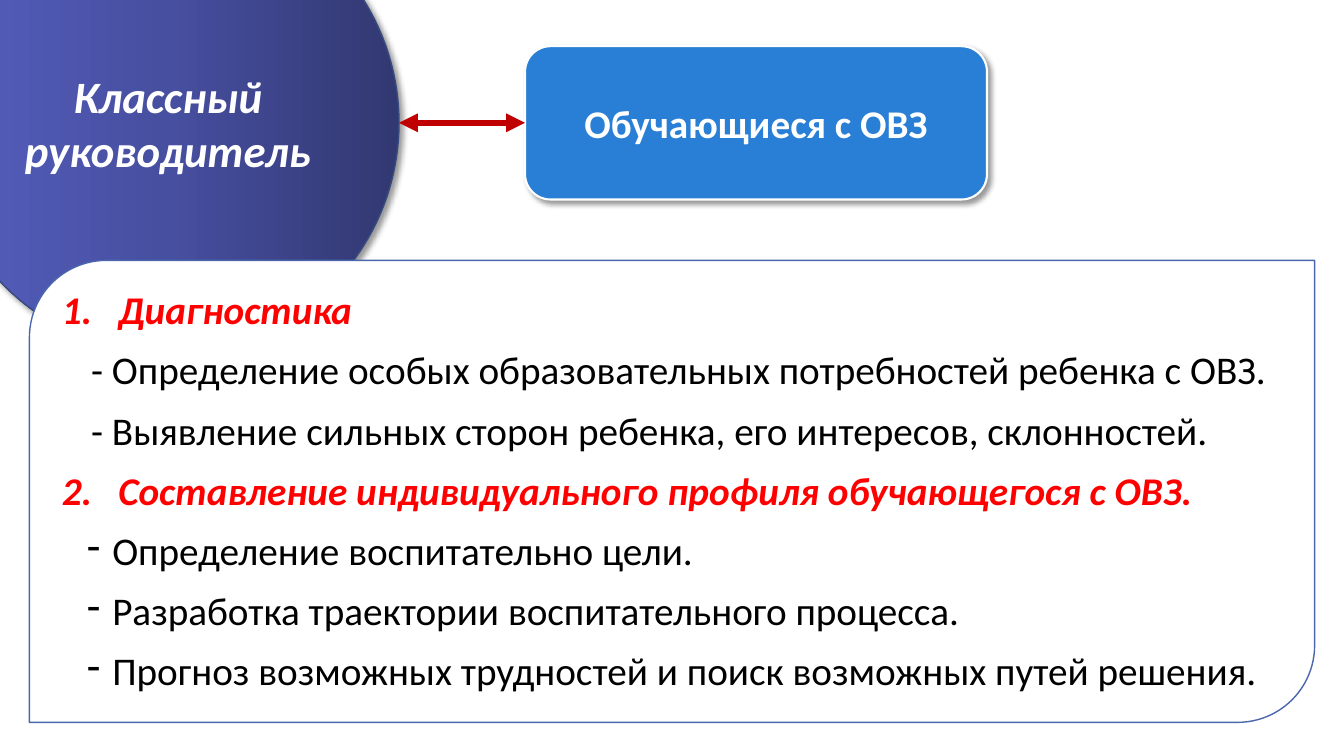
"""Build a slide on how a class teacher works with special-needs students."""
import pptx
import pptx.dml.color
import pptx.enum.shapes
import pptx.enum.text
import pptx.oxml
import pptx.oxml.ns
import pptx.util

COLORS = {
    "white": "FFFFFF", "black": "000000", "red": "FF0000", "arrow": "C00000",
    "blue": "297FD5", "frame": "4A66AC", "rim": "374B7F",
    "dark": "323871", "middle": "474FA0", "light": "555EBE",
}
SHAPES = pptx.enum.shapes.MSO_SHAPE
ANCHORS = pptx.enum.text.MSO_ANCHOR
ALIGNS = pptx.enum.text.PP_ALIGN

HEADING = {"size": pptx.util.Pt(28), "bold": True, "italic": True}
ITEM = {"size": pptx.util.Pt(28), "bold": False, "italic": False}
NUMBER_INDENT = (0.56, -0.56)
PLAIN_INDENT = (0.29, 0)
DASH_INDENT = (0.5, -0.25)
DASH = '<a:buChar {ns} char="-"/>'
NUMBER = '<a:buAutoNum {{ns}} type="arabicPeriod" startAt="{}"/>'

TASKS = [
    ("Диагностика", "red", HEADING, NUMBER_INDENT, NUMBER.format(1)),
    ("- Определение особых образовательных потребностей ребенка с ОВЗ.",
     "black", ITEM, PLAIN_INDENT, None),
    ("- Выявление сильных сторон ребенка, его интересов, склонностей.",
     "black", ITEM, PLAIN_INDENT, None),
    ("Составление индивидуального профиля обучающегося с ОВЗ.",
     "red", HEADING, NUMBER_INDENT, NUMBER.format(2)),
    ("Определение воспитательно цели.", "black", ITEM, DASH_INDENT, DASH),
    ("Разработка траектории воспитательного процесса.",
     "black", ITEM, DASH_INDENT, DASH),
    ("Прогноз возможных трудностей и поиск возможных путей решения.",
     "black", ITEM, DASH_INDENT, DASH),
]


def rgb(name):
    return pptx.dml.color.RGBColor.from_string(COLORS[name])


def xml(text):
    return pptx.oxml.parse_xml(text.format(ns=pptx.oxml.ns.nsdecls("a")))


class SlideBuilder:
    font = "Calibri"
    columns, rows = 64, 36

    def __init__(self, prs):
        self.s = prs.slides.add_slide(prs.slide_layouts[6])
        self.col = prs.slide_width / self.columns
        self.row = prs.slide_height / self.rows

    def place(self, x, y):
        return round(x * self.col), round(y * self.row)

    def shape(self, kind, x, y, w, h, fill, line, width):
        sp = self.s.shapes.add_shape(kind, *self.place(x, y), *self.place(w, h))
        sp.shadow.inherit = False
        sp.fill.solid()
        sp.fill.fore_color.rgb = rgb(fill)
        sp.line.color.rgb = rgb(line)
        sp.line.width = pptx.util.Pt(width)
        sp.text_frame.word_wrap = True
        return sp

    def shadow(self, sp):
        effects = sp._element.spPr.find(pptx.oxml.ns.qn("a:effectLst"))
        effects.append(xml(
            '<a:outerShdw {ns} blurRad="50800" dist="38100" dir="2700000" algn="tl" '
            'rotWithShape="0"><a:srgbClr val="000000"><a:alpha val="40000"/>'
            '</a:srgbClr></a:outerShdw>'))

    def gradient(self, sp, names):
        sp.fill.gradient()
        sp.fill.gradient_angle = 180
        stops = sp._element.spPr.find(".//" + pptx.oxml.ns.qn("a:gsLst"))
        for stop in list(stops):
            stops.remove(stop)
        for i, name in enumerate(names):
            pos = 100000 * i // (len(names) - 1)
            stops.append(xml(f'<a:gs {{ns}} pos="{pos}"><a:srgbClr '
                             f'val="{COLORS[name]}"/></a:gs>'))

    def run(self, p, text, color, style):
        r = p.add_run()
        r.text = text
        r.font.color.rgb = rgb(color)
        for key, value in {"name": self.font, **style}.items():
            setattr(r.font, key, value)

    def label(self, sp, text, style):
        tf = sp.text_frame
        tf.vertical_anchor = ANCHORS.MIDDLE
        p = tf.paragraphs[0]
        p.alignment = ALIGNS.CENTER
        self.run(p, text, "white", style)

    def outline(self, sp, items):
        tf = sp.text_frame
        tf.vertical_anchor = ANCHORS.TOP
        layout = {"alignment": ALIGNS.LEFT, "space_before": pptx.util.Pt(10),
                  "line_spacing": 0.98}
        for i, (text, color, style, (margin, indent), bullet) in enumerate(items):
            p = tf.add_paragraph() if i else tf.paragraphs[0]
            for key, value in layout.items():
                setattr(p, key, value)
            pPr = p._p.get_or_add_pPr()
            pPr.set("marL", str(pptx.util.Inches(margin)))
            pPr.set("indent", str(pptx.util.Inches(indent)))
            if bullet:
                pPr.append(xml(bullet))
            self.run(p, text, color, style)

    def arrow(self, start, target, color, width):
        c = self.s.shapes.add_connector(
            pptx.enum.shapes.MSO_CONNECTOR.STRAIGHT, *self.place(*start),
            target.left, target.top + target.height // 2)
        c.end_connect(target, 1)
        c.line.color.rgb = rgb(color)
        c.line.width = pptx.util.Pt(width)
        spPr = c._element.spPr
        ln = spPr.find(pptx.oxml.ns.qn("a:ln"))
        for end in ("headEnd", "tailEnd"):
            ln.append(xml(f'<a:{end} {{ns}} type="triangle"/>'))
        spPr.append(xml("<a:effectLst {ns}/>"))


def main():
    prs = pptx.Presentation()
    prs.slide_width = pptx.util.Inches(13.33)
    prs.slide_height = pptx.util.Inches(7.5)
    b = SlideBuilder(prs)

    teacher = b.shape(SHAPES.OVAL, -3, -5.15, 22, 22, "middle", "rim", 1)
    b.gradient(teacher, ["dark", "middle", "light"])
    b.shadow(teacher)
    b.label(teacher, "Классный руководитель", {**HEADING, "size": pptx.util.Pt(32)})

    students = b.shape(SHAPES.ROUNDED_RECTANGLE, 25, 2.2, 22, 7.3, "blue", "white", 1.5)
    b.shadow(students)
    b.label(students, "Обучающиеся с ОВЗ", {**HEADING, "italic": False})
    b.arrow((19, 5.85), students, "arrow", 4.5)

    tasks = b.shape(SHAPES.ROUND_2_DIAG_RECTANGLE, 1.4, 12.4, 61.2, 22,
                    "white", "frame", 1)
    b.outline(tasks, TASKS)
    prs.save("out.pptx")


if __name__ == "__main__":
    main()
